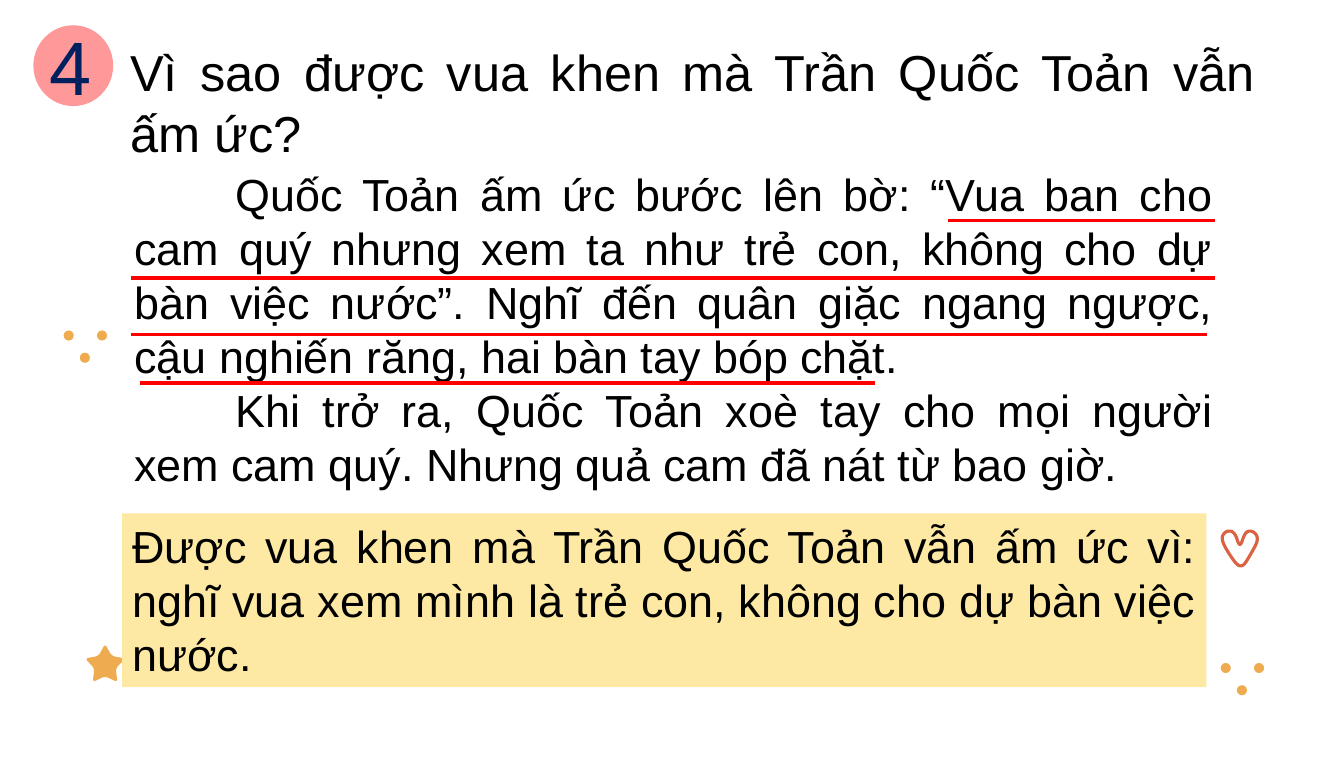
import math

from lxml import etree
from pptx import Presentation
from pptx.dml.color import RGBColor
from pptx.enum.shapes import MSO_CONNECTOR, MSO_SHAPE
from pptx.enum.text import MSO_ANCHOR, MSO_AUTO_SIZE, PP_ALIGN
from pptx.oxml.ns import qn
from pptx.util import Inches, Pt

OVAL = MSO_SHAPE.OVAL
STRAIGHT = MSO_CONNECTOR.STRAIGHT
TOP, MIDDLE = MSO_ANCHOR.TOP, MSO_ANCHOR.MIDDLE
JUSTIFY = PP_ALIGN.JUSTIFY
GROW, FIXED = MSO_AUTO_SIZE.SHAPE_TO_FIT_TEXT, MSO_AUTO_SIZE.NONE


def color(value):
    return RGBColor.from_string(value)


class LessonSlide:
    FONT = "Arial"
    BLACK, NAVY, RED = "000000", "002060", "FF0000"
    WHITE, PINK, CREAM = "FFFFFF", "FF9999", "FDE9A4"
    ORANGE, CORAL = "EEAB4F", "DA6343"

    def __init__(self, slide):
        self.slide = slide
        self.shapes = slide.shapes

    def paint(self, shape, fill=None, line=None, width=2.25):
        shape.shadow.inherit = False
        if fill:
            shape.fill.solid()
            shape.fill.fore_color.rgb = color(fill)
        else:
            shape.fill.background()
        if line:
            shape.line.color.rgb = color(line)
            shape.line.width = Pt(width)
        else:
            shape.line.fill.background()

    def circle(self, left, top, width, height, fill):
        shape = self.shapes.add_shape(
            OVAL, Inches(left), Inches(top), Inches(width), Inches(height))
        self.paint(shape, fill)

    def dots(self, left, top):
        for dx, dy in ((0, 0), (0.33, 0), (0.16, 0.22)):
            self.circle(left + dx, top + dy, 0.1, 0.1, self.ORANGE)

    def rounded_outline(self, corners, share, fill=None, line=None):
        """Closed outline; share is the part of each side used by a corner."""
        points = []
        for index, (x, y) in enumerate(corners):
            before, after = corners[index - 1], corners[(index + 1) % len(corners)]
            for step in range(7):
                t = step / 6
                back, ahead = share * (1 - t) ** 2, share * t ** 2
                points.append((
                    Inches(x + back * (before[0] - x) + ahead * (after[0] - x)),
                    Inches(y + back * (before[1] - y) + ahead * (after[1] - y))))
        builder = self.shapes.build_freeform(*points[0])
        builder.add_line_segments(points[1:], close=True)
        self.paint(builder.convert_to_shape(), fill, line)

    def text(self, left, top, width, height, paragraphs, size, font_color=BLACK,
             fill=None, indent=0, anchor=TOP, inset=None, resize=GROW):
        shape = self.shapes.add_textbox(
            Inches(left), Inches(top), Inches(width), Inches(height))
        if fill:
            self.paint(shape, fill)
        frame = shape.text_frame
        frame.text = "\n".join(paragraphs)
        frame.word_wrap = True
        frame.auto_size = resize
        frame.vertical_anchor = anchor
        if inset:
            frame.margin_left = frame.margin_right = Inches(inset)
            frame.margin_top = frame.margin_bottom = Inches(inset)
        for paragraph in frame.paragraphs:
            paragraph.alignment = JUSTIFY
            if indent:
                properties = paragraph._p.get_or_add_pPr()
                properties.set("indent", str(Inches(indent)))
            for run in paragraph.runs:
                run.font.name = self.FONT
                run.font.size = Pt(size)
                run.font.color.rgb = color(font_color)

    def underline(self, left, right, y):
        connector = self.shapes.add_connector(
            STRAIGHT, Inches(left), Inches(y), Inches(right), Inches(y))
        connector.line.color.rgb = color(self.RED)
        connector.line.width = Pt(2.25)
        etree.SubElement(connector._element.spPr, qn("a:effectLst"))


def main():
    presentation = Presentation()
    presentation.slide_width = Inches(13.3)
    presentation.slide_height = Inches(7.5)
    page = LessonSlide(presentation.slides.add_slide(presentation.slide_layouts[6]))

    # Decorations at the margins
    page.dots(12.08, 6.56)
    page.dots(0.63, 3.27)
    heart = [(12.27, 5.43), (12.22, 5.26), (12.13, 5.25), (12.08, 5.33),
             (12.16, 5.48), (12.28, 5.64), (12.38, 5.48), (12.46, 5.33),
             (12.4, 5.25), (12.32, 5.26)]
    page.rounded_outline(heart, 0.5, line=page.CORAL)
    star = []
    for corner in range(10):
        radius = 0.11 if corner % 2 else 0.21
        angle = math.radians(36 * corner)
        star.append((1.04 + radius * math.sin(angle), 6.58 - radius * math.cos(angle)))
    page.rounded_outline(star, 0.3, fill=page.ORANGE)

    # Question with its number
    page.circle(0.33, 0.25, 0.79, 0.8, page.PINK)
    page.text(0.36, 0.39, 0.8, 0.52, ["4"], 53.9, page.NAVY,
              anchor=MIDDLE, inset=0.13, resize=FIXED)
    page.text(1.19, 0.36, 11.33, 1.31,
              ["Vì sao được vua khen mà Trần Quốc Toản vẫn ấm ức?"], 36)

    # Passage from the story
    page.text(1.23, 1.6, 10.88, 3.33, [
        "Quốc Toản ấm ức bước lên bờ: “Vua ban cho cam quý nhưng xem ta như "
        "trẻ con, không cho dự bàn việc nước”. Nghĩ đến quân giặc ngang ngược, "
        "cậu nghiến răng, hai bàn tay bóp chặt.",
        "Khi trở ra, Quốc Toản xoè tay cho mọi người xem cam quý. "
        "Nhưng quả cam đã nát từ bao giờ.",
    ], 32, fill=page.WHITE, indent=1)

    # Answer
    page.text(1.21, 5.08, 10.73, 1.72, [
        "Được vua khen mà Trần Quốc Toản vẫn ấm ức vì: nghĩ vua xem mình là "
        "trẻ con, không cho dự bàn việc nước.",
    ], 32, fill=page.CREAM)

    # Underlined evidence in the passage
    for left, right, y in ((9.38, 12.02, 2.18), (1.3, 12.02, 2.75),
                           (1.3, 11.94, 3.31), (1.39, 8.66, 3.79)):
        page.underline(left, right, y)

    presentation.save("out.pptx")


if __name__ == "__main__":
    main()
